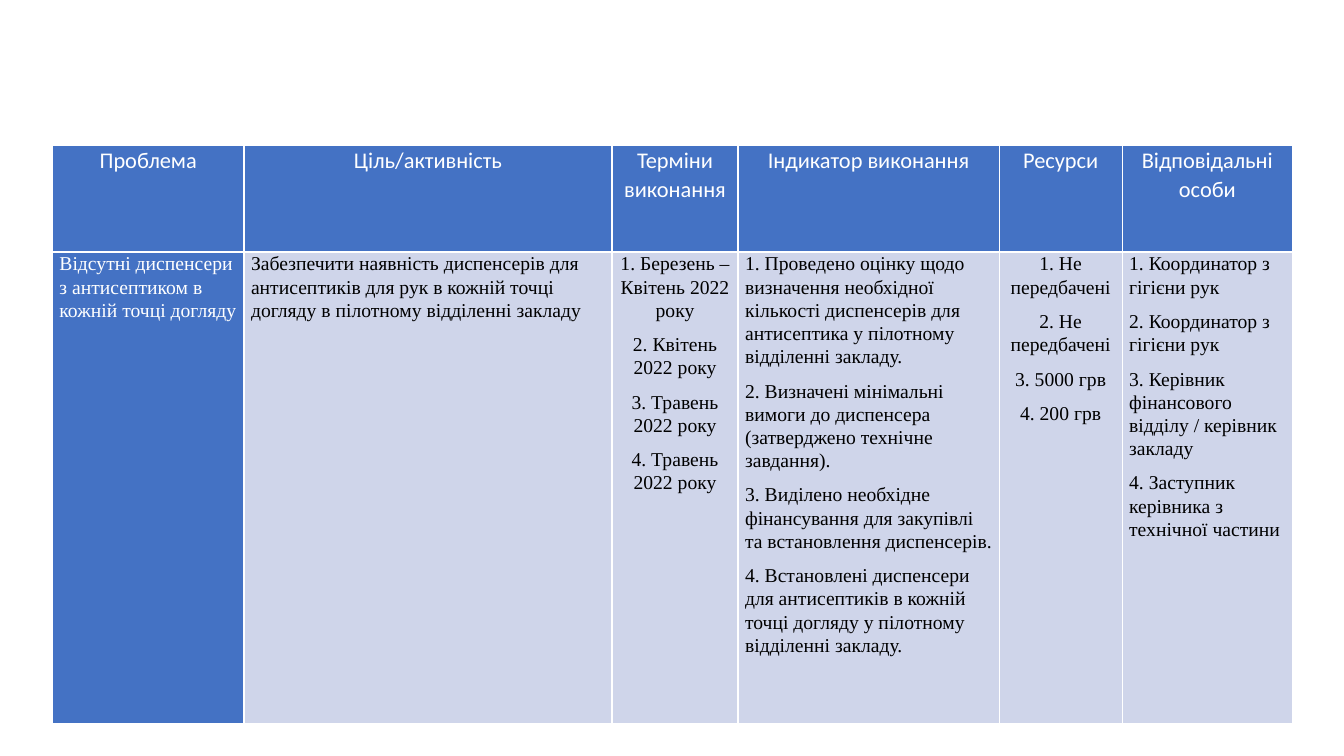
from lxml.etree import SubElement
from pptx import Presentation
from pptx.dml.color import RGBColor
from pptx.enum.text import PP_ALIGN
from pptx.oxml.ns import qn
from pptx.util import Inches, Pt

WHITE = RGBColor(0xFF, 0xFF, 0xFF)
BLACK = RGBColor(0, 0, 0)
BLUE = RGBColor(0x44, 0x72, 0xC4)
PALE = RGBColor(0xCF, 0xD5, 0xEA)

WIDTHS = [1.9, 3.65, 1.25, 2.59, 1.22, 1.69]
HEIGHTS = [1.06, 4.68]
CENTRED = (2, 4)

HEADS = [
    "Проблема",
    "Ціль/активність",
    "Терміни виконання",
    "Індикатор виконання",
    "Ресурси",
    "Відповідальні особи",
]
PLAN = [
    ["Відсутні диспенсери з антисептиком в кожній точці догляду"],
    ["Забезпечити наявність диспенсерів для антисептиків для рук в кожній "
     "точці догляду в пілотному відділенні закладу"],
    ["1. Березень – Квітень 2022 року",
     "2. Квітень 2022 року",
     "3. Травень 2022 року",
     "4. Травень 2022 року"],
    ["1. Проведено оцінку щодо визначення необхідної кількості диспенсерів "
     "для антисептика у пілотному відділенні закладу.",
     "2. Визначені мінімальні вимоги до диспенсера (затверджено технічне "
     "завдання).",
     "3. Виділено необхідне фінансування для закупівлі та встановлення "
     "диспенсерів.",
     "4. Встановлені диспенсери для антисептиків в кожній точці догляду у "
     "пілотному відділенні закладу."],
    ["1. Не передбачені", "2. Не передбачені", "3. 5000 грв", "4. 200 грв"],
    ["1. Координатор з гігієни рук",
     "2. Координатор з гігієни рук",
     "3. Керівник фінансового відділу / керівник закладу",
     "4. Заступник керівника з технічної частини"],
]


class Deck:
    def __init__(self):
        self.show = Presentation()
        self.show.slide_width = Inches(13.33)
        self.show.slide_height = Inches(7.5)
        self.slide = self.show.slides.add_slide(self.show.slide_layouts[6])

    def table(self, left, top, widths, heights):
        frame = self.slide.shapes.add_table(
            len(heights), len(widths), Inches(left), Inches(top),
            Inches(sum(widths)), Inches(sum(heights)))
        grid = frame.table
        for col, width in zip(grid.columns, widths):
            col.width = Inches(width)
        for row, height in zip(grid.rows, heights):
            row.height = Inches(height)
        return grid

    def border(self, cell):
        props = cell._tc.get_or_add_tcPr()
        for side in ("lnL", "lnR", "lnT", "lnB"):
            line = SubElement(props, qn(f"a:{side}"), w=str(Pt(1)))
            fill = SubElement(line, qn("a:solidFill"))
            SubElement(fill, qn("a:srgbClr"), val=str(WHITE))

    def cell(self, cell, texts, font, size, color, back, align):
        self.border(cell)
        cell.fill.solid()
        cell.fill.fore_color.rgb = back
        cell.margin_left = cell.margin_right = Inches(0.07)
        cell.margin_top = cell.margin_bottom = 0
        frame = cell.text_frame
        for index, text in enumerate(texts):
            para = frame.add_paragraph() if index else frame.paragraphs[0]
            para.alignment = align
            para.line_spacing = 1.07
            para.space_after = Pt(8)
            run = para.add_run()
            run.text = text
            run.font.name = font
            run.font.size = Pt(size)
            run.font.bold = False
            run.font.color.rgb = color


def main():
    deck = Deck()
    grid = deck.table(0.52, 1.44, WIDTHS, HEIGHTS)
    for col, (head, texts) in enumerate(zip(HEADS, PLAN)):
        deck.cell(grid.cell(0, col), [head], "Calibri", 16, WHITE, BLUE,
                  PP_ALIGN.CENTER)
        color, back = (BLACK, PALE) if col else (WHITE, BLUE)
        align = PP_ALIGN.CENTER if col in CENTRED else PP_ALIGN.LEFT
        deck.cell(grid.cell(1, col), texts, "Times New Roman", 14, color,
                  back, align)
    deck.show.save("out.pptx")


if __name__ == "__main__":
    main()
